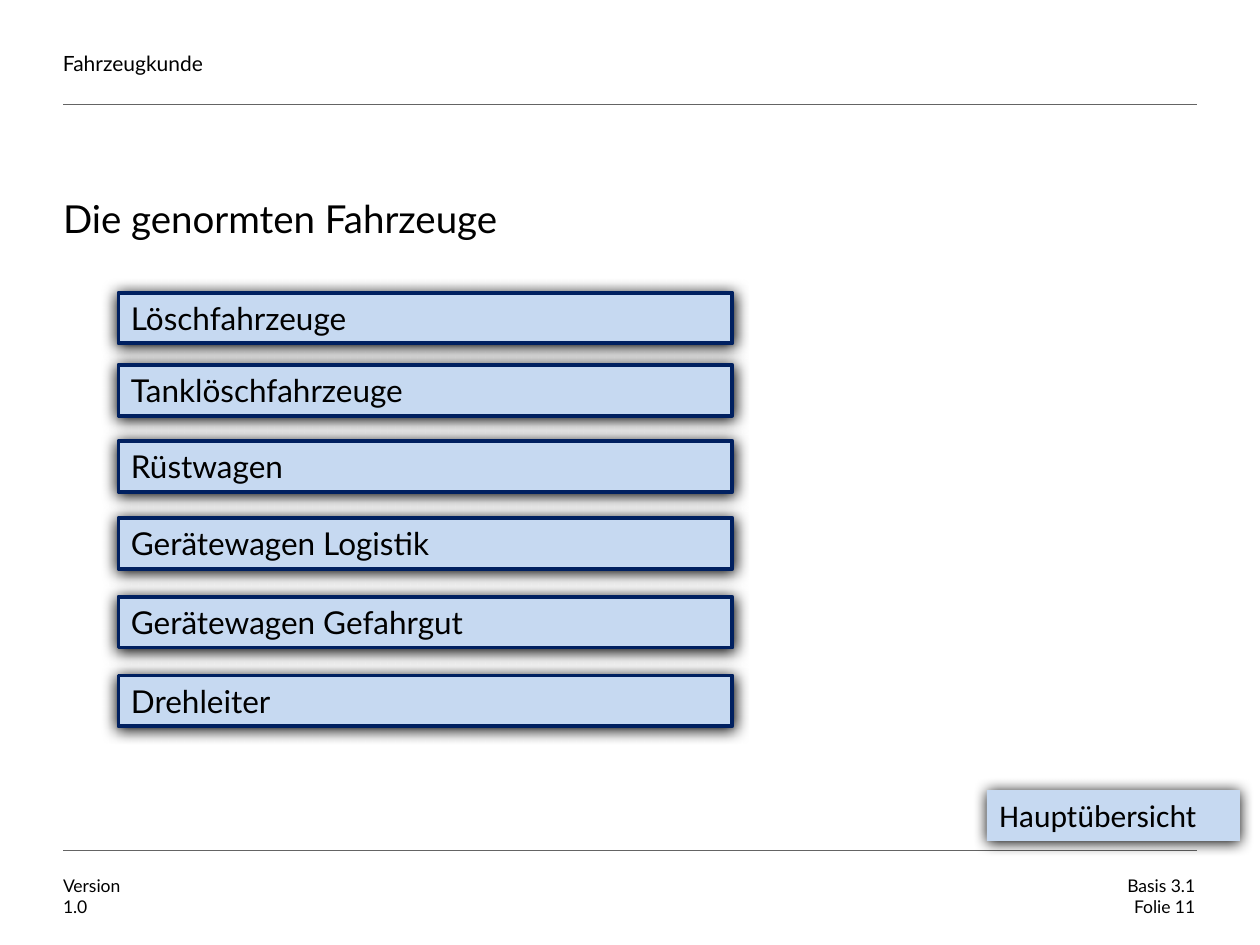
from pptx import Presentation
from pptx.dml.color import RGBColor
from pptx.enum.shapes import MSO_CONNECTOR as Connector, MSO_SHAPE as Shape
from pptx.enum.text import MSO_ANCHOR as Anchor, PP_ALIGN as Align
from pptx.oxml.ns import qn
from pptx.util import Pt
from lxml.etree import SubElement


def colour(value):
    return RGBColor.from_string(value)


def write(frame, text, size=18, font="Lato", ink="000000", align=Align.LEFT,
          anchor=Anchor.MIDDLE, margins=(0, 0), spacing=None):
    """Fill a text frame, one paragraph per line of text."""
    frame.word_wrap = True
    frame.vertical_anchor = anchor
    frame.margin_left = frame.margin_right = Pt(margins[0])
    frame.margin_top = frame.margin_bottom = Pt(margins[1])
    frame.text = text
    for paragraph in frame.paragraphs:
        paragraph.alignment = align
        if spacing:
            paragraph.line_spacing = Pt(spacing)
        paragraph.font.size = Pt(size)
        paragraph.font.name = font
        paragraph.font.color.rgb = colour(ink)


class SlideBuilder:
    rule_colour = "646464"
    button_fill = "C6D9F1"
    button_border = "002060"
    button_height = 29

    def __init__(self, slide):
        self.slide = slide

    def text(self, left, top, width, height, text, **style):
        box = self.slide.shapes.add_textbox(Pt(left), Pt(top), Pt(width), Pt(height))
        write(box.text_frame, text, **style)

    def rule(self, left, right, top):
        line = self.slide.shapes.add_connector(
            Connector.STRAIGHT, Pt(left), Pt(top), Pt(right), Pt(top))
        line.line.color.rgb = colour(self.rule_colour)
        line.line.width = Pt(0.25)
        SubElement(line._element.spPr, qn("a:effectLst"))

    def button(self, left, top, width, text, border=True, **style):
        shape = self.slide.shapes.add_shape(
            Shape.RECTANGLE, Pt(left), Pt(top), Pt(width), Pt(self.button_height))
        shape.fill.solid()
        shape.fill.fore_color.rgb = colour(self.button_fill)
        if border:
            shape.line.color.rgb = colour(self.button_border)
            shape.line.width = Pt(2.25)
        else:
            shape.line.fill.background()
        self.add_shadow(shape)
        write(shape.text_frame, text, margins=(7.2, 3.6), anchor=Anchor.TOP, **style)

    def add_shadow(self, shape):
        shape.shadow.inherit = False
        effects = shape._element.spPr.find(qn("a:effectLst"))
        shadow = SubElement(effects, qn("a:outerShdw"), blurRad=str(Pt(8.5)),
                            dist=str(Pt(1)), dir="5400000", algn="t", rotWithShape="0")
        SubElement(shadow, qn("a:srgbClr"), val="000000")


def main():
    presentation = Presentation()
    presentation.slide_width, presentation.slide_height = Pt(720), Pt(540)
    slide = presentation.slides.add_slide(presentation.slide_layouts[6])
    builder = SlideBuilder(slide)

    # Header and footer
    for top in (59.75, 486):
        builder.rule(36, 684, top)
    builder.text(36, 24, 438, 24, "Fahrzeugkunde", size=12)
    builder.text(36, 496, 40, 32, "Version\n1.0", size=10)
    builder.text(581, 496, 102, 32, "Basis 3.1\nFolie 11", size=10, align=Align.RIGHT)

    # Title
    builder.text(36, 114, 516, 48, "Die genormten Fahrzeuge", size=22,
                 anchor=Anchor.TOP, spacing=24)

    # Vehicle types
    vehicles = {
        "Löschfahrzeuge": 167.25,
        "Tanklöschfahrzeuge": 208.5,
        "Rüstwagen": 252,
        "Gerätewagen Logistik": 296,
        "Gerätewagen Gefahrgut": 341,
        "Drehleiter": 386,
    }
    for name, top in vehicles.items():
        builder.button(67.75, top, 350.75, name)

    # Back to the overview
    builder.button(564, 451.5, 144.5, "Hauptübersicht", border=False, font="Calibri")

    presentation.save("out.pptx")


if __name__ == "__main__":
    main()
